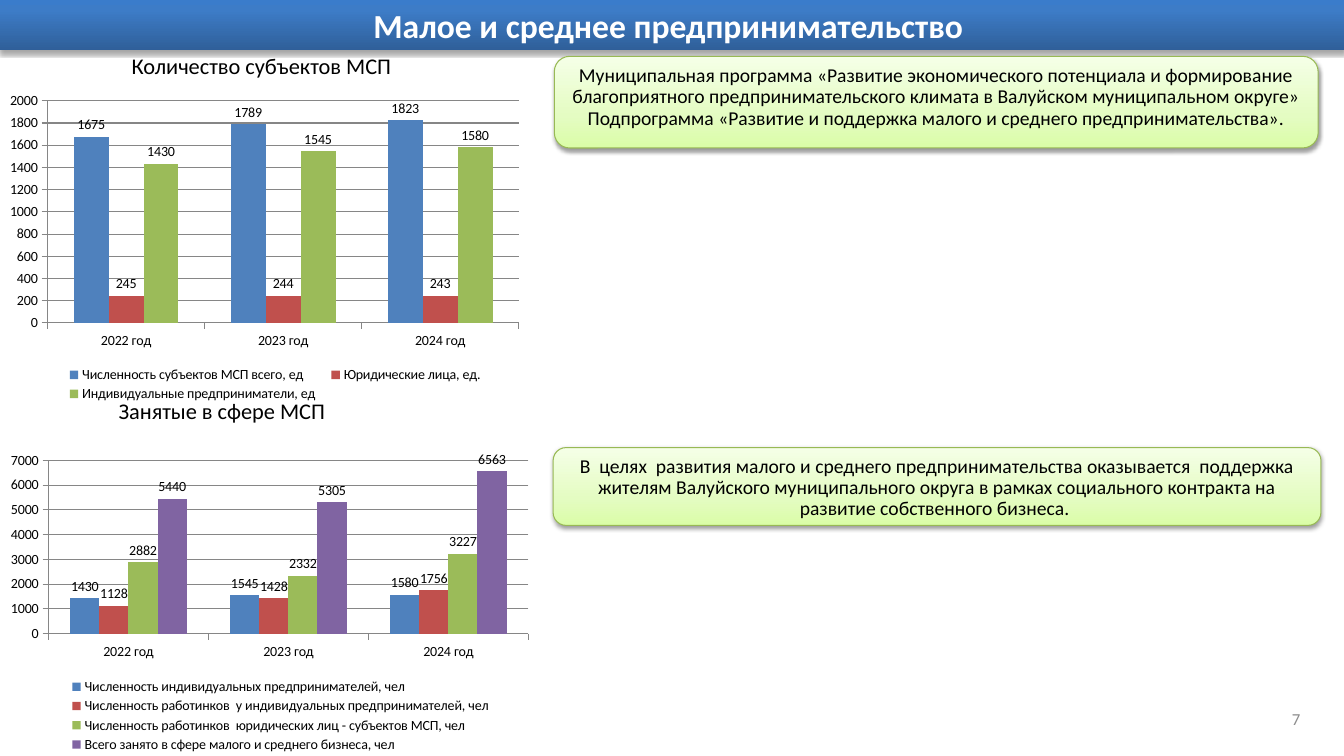
from pptx import Presentation
from pptx.chart.data import CategoryChartData
from pptx.dml.color import RGBColor
from pptx.enum.chart import XL_CHART_TYPE, XL_LABEL_POSITION, XL_LEGEND_POSITION, XL_TICK_MARK
from pptx.enum.shapes import MSO_SHAPE
from pptx.enum.text import MSO_ANCHOR, PP_ALIGN
from pptx.oxml import parse_xml
from pptx.oxml.ns import nsdecls
from pptx.util import Cm, Pt

LEFT, CENTER, RIGHT = PP_ALIGN.LEFT, PP_ALIGN.CENTER, PP_ALIGN.RIGHT
TOP, MIDDLE = MSO_ANCHOR.TOP, MSO_ANCHOR.MIDDLE
ROUND = MSO_SHAPE.ROUNDED_RECTANGLE
COLUMNS = XL_CHART_TYPE.COLUMN_CLUSTERED
BELOW = XL_LEGEND_POSITION.BOTTOM
OUTSIDE = XL_LABEL_POSITION.OUTSIDE_END
TICK = XL_TICK_MARK.OUTSIDE
FONT = "Calibri"
BLUE = [(0, "2F5F99"), (80, "3D7CC7"), (100, "3A7CCB")]
GREEN = [(0, "DAFDA7"), (35, "E4FCC2"), (100, "F5FFE7")]
COLORS = ["4F81BD", "C0504D", "9BBB59", "8064A2"]
YEARS = ["2022 год", "2023 год", "2024 год"]


def hue(code):
    return RGBColor.from_string(code)


def write(shape, text, size=14, color="000000", bold=False, align=LEFT, anchor=TOP, gap=1.0):
    """Fill the shape with text, one paragraph per line."""
    frame = shape.text_frame
    frame.text = text
    frame.word_wrap = True
    frame.vertical_anchor = anchor
    for para in frame.paragraphs:
        para.alignment = align
        para.line_spacing = gap
        font = para.runs[0].font
        font.name, font.size, font.bold = FONT, Pt(size), bold
        font.color.rgb = hue(color)


deck = Presentation()
deck.slide_width, deck.slide_height = Cm(33.87), Cm(19.05)
slide = deck.slides.add_slide(deck.slide_layouts[5])
shapes = slide.shapes

# Title bar
title = shapes.title
title.left, title.top, title.width, title.height = Cm(0), Cm(0), Cm(33.87), Cm(1.27)
write(title, "Малое и среднее предпринимательство ", size=24, color="FFFFFF",
      bold=True, align=CENTER, anchor=MIDDLE)
filled = [(title, BLUE, 35, 1.8)]

# Chart captions
for text, left, top in [("Количество субъектов МСП", 3.07, 1.19),
                        ("Занятые в сфере МСП", 2.74, 9.88)]:
    write(shapes.add_textbox(Cm(left), Cm(top), Cm(7.62), Cm(0.94)), text, size=16)

# Green panels
panels = [
    ("Муниципальная программа «Развитие экономического потенциала и формирование "
     "благоприятного предпринимательского климата в Валуйском муниципальном округе»\n"
     "Подпрограмма «Развитие и поддержка малого и среднего предпринимательства».",
     (13.97, 1.42, 19.25, 2.31)),
    ("В  целях  развития малого и среднего предпринимательства оказывается  поддержка "
     "жителям Валуйского муниципального округа в рамках социального контракта на "
     "развитие собственного бизнеса. ",
     (13.94, 11.28, 19.35, 1.96)),
]
for text, box in panels:
    panel = shapes.add_shape(ROUND, *map(Cm, box))
    panel.line.color.rgb = hue("98B955")
    panel.line.width = Pt(0.75)
    write(panel, text, align=CENTER, gap=0.9)
    filled.append((panel, GREEN, 38, 1.6))

# Gradients and shadows
for shape, stops, alpha, drop in filled:
    marks = "".join(f'<a:gs pos="{pos * 1000}"><a:srgbClr val="{code}"/></a:gs>'
                    for pos, code in stops)
    grad = parse_xml(f'<a:gradFill {nsdecls("a")} rotWithShape="1"><a:gsLst>{marks}</a:gsLst>'
                     '<a:lin ang="16200000" scaled="0"/></a:gradFill>')
    glow = parse_xml(f'<a:effectLst {nsdecls("a")}><a:outerShdw blurRad="{Pt(3.1)}" '
                     f'dist="{Pt(drop)}" dir="5400000" rotWithShape="0"><a:srgbClr val="000000">'
                     f'<a:alpha val="{alpha * 1000}"/></a:srgbClr></a:outerShdw></a:effectLst>')
    props = shape._element.spPr
    if shape.shape_type != title.shape_type:
        props.insert(2, grad)
    else:
        props.append(grad)
    props.append(glow)

# Page number
number = shapes.add_textbox(Cm(25.12), Cm(17.6), Cm(7.9), Cm(1.02))
write(number, "7", size=12, color="8C8C8C", align=RIGHT, anchor=MIDDLE)

# Charts: box, top value, step, plot area and legend as shares of the chart
charts = [
    ((0, 2.18, 13.34, 8.03), 2000, 200, (0.09, 0.045, 0.89, 0.697), (0.11, 0.87, 0.82, 0.13), [
        ("Численность субъектов МСП всего, ед", (1675, 1789, 1823)),
        ("Юридические лица, ед.", (245, 244, 243)),
        ("Индивидуальные предприниматели, ед", (1430, 1545, 1580)),
    ]),
    ((0, 11.25, 13.59, 7.8), 7000, 1000, (0.09, 0.045, 0.89, 0.56), (0.11, 0.74, 0.82, 0.26), [
        ("Численность индивидуальных предпринимателей, чел", (1430, 1545, 1580)),
        ("Численность работинков  у индивидуальных предпринимателей, чел", (1128, 1428, 1756)),
        ("Численность работинков  юридических лиц - субъектов МСП, чел", (2882, 2332, 3227)),
        ("Всего занято в сфере малого и среднего бизнеса, чел", (5440, 5305, 6563)),
    ]),
]
for box, peak, step, area, key, rows in charts:
    data = CategoryChartData()
    data.categories = YEARS
    for name, values in rows:
        data.add_series(name, values)
    chart = shapes.add_chart(COLUMNS, *map(Cm, box), data).chart
    chart.has_title = False
    chart.font.name, chart.font.size = FONT, Pt(10)
    chart.font.color.rgb = hue("000000")
    chart.has_legend = True
    chart.legend.position = BELOW
    chart.legend.include_in_layout = False

    plot = chart.plots[0]
    plot.vary_by_categories = False
    plot.gap_width, plot.overlap = 150, 0
    plot.has_data_labels = True
    plot.data_labels.show_value = True
    plot.data_labels.position = OUTSIDE
    for series, color in zip(plot.series, COLORS):
        series.format.fill.solid()
        series.format.fill.fore_color.rgb = hue(color)

    scale = chart.value_axis
    scale.minimum_scale, scale.maximum_scale, scale.major_unit = 0, peak, step
    scale.has_major_gridlines = True
    for axis in (scale, chart.category_axis):
        axis.major_tick_mark = TICK
    for line in (scale.format.line, chart.category_axis.format.line,
                 scale.major_gridlines.format.line):
        line.color.rgb = hue("868686")
        line.width = Pt(0.75)

    tree = chart._chartSpace.chart
    for part, spot, target in [(tree.plotArea, area, '<c:layoutTarget val="inner"/>'),
                               (chart.legend._element, key, "")]:
        for old in part.findall("{*}layout"):
            part.remove(old)
        sizes = "".join(f'<c:{tag} val="{share}"/>' for tag, share in zip("xywh", spot))
        layout = parse_xml(f'<c:layout {nsdecls("c")}><c:manualLayout>{target}'
                           '<c:xMode val="edge"/><c:yMode val="edge"/>'
                           f'{sizes}</c:manualLayout></c:layout>')
        part.insert(0 if target else 1, layout)

deck.save("out.pptx")
